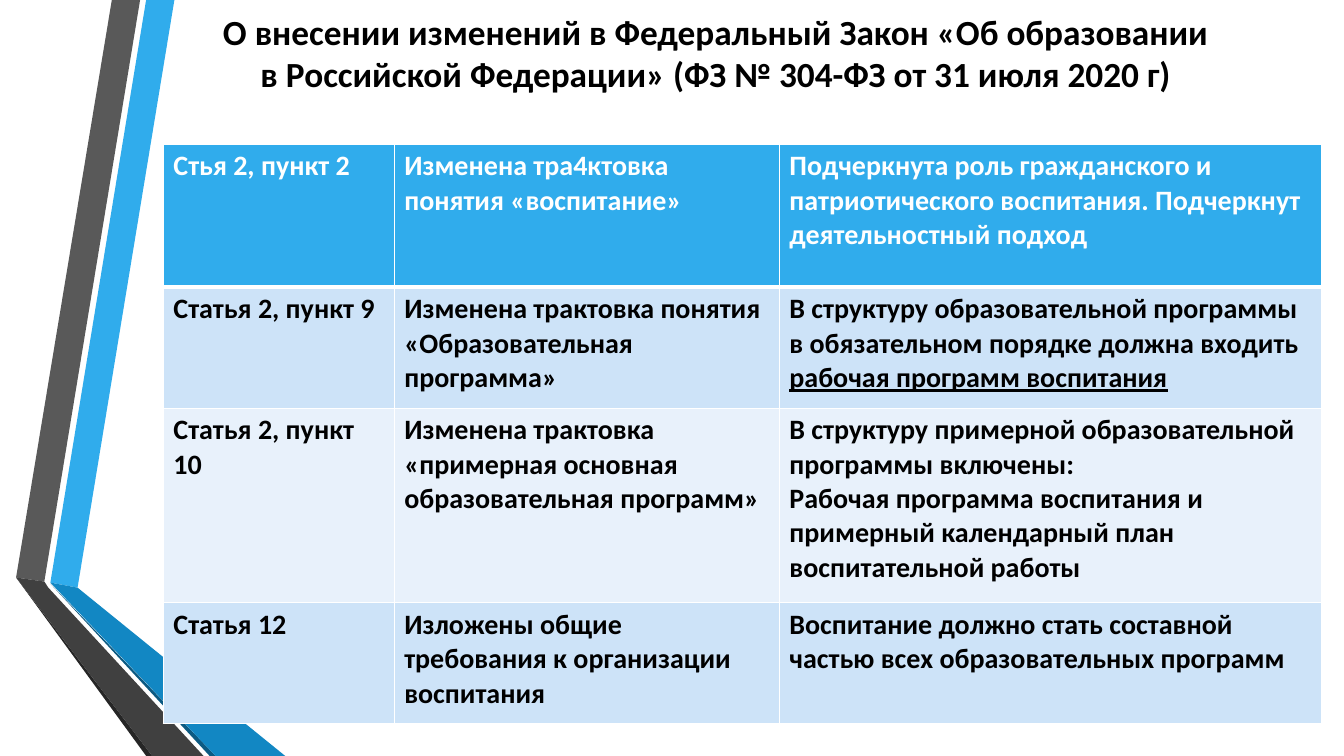
from dataclasses import dataclass

from lxml import etree
from pptx import Presentation
from pptx.dml.color import RGBColor
from pptx.enum.text import MSO_ANCHOR, MSO_AUTO_SIZE, PP_ALIGN
from pptx.oxml.ns import qn
from pptx.util import Pt

TOP = MSO_ANCHOR.TOP
CENTER = PP_ALIGN.CENTER
NO_FIT = MSO_AUTO_SIZE.NONE
PX = 9144
TITLE_ONLY = 5


@dataclass(frozen=True)
class Theme:
    font: str = "Calibri"
    title_size: float = 25.2
    cell_size: float = 20
    text: str = "000000"
    white: str = "FFFFFF"
    accent: str = "30ACEC"
    accent_dark: str = "1287C3"
    accent_edge: str = "0C5A82"
    grey: str = "595959"
    grey_dark: str = "404040"
    grey_edge: str = "262626"
    band: str = "CDE3F8"
    band_light: str = "E8F1FB"
    border: float = 1
    header_border: float = 3


TITLE = ("О внесении изменений в Федеральный Закон «Об образовании\v"
         "в Российской Федерации» (ФЗ № 304-ФЗ от 31 июля 2020 г)")
ROWS = [
    ["Стья 2, пункт 2",
     "Изменена тра4ктовка понятия «воспитание»",
     "Подчеркнута роль гражданского и патриотического воспитания. "
     "Подчеркнут деятельностный подход"],
    ["Статья 2, пункт 9",
     "Изменена трактовка понятия «Образовательная программа»",
     "В структуру образовательной программы в обязательном порядке "
     "должна входить "],
    ["Статья 2, пункт 10",
     "Изменена трактовка «примерная основная образовательная программ»",
     "В структуру примерной образовательной программы включены:\n"
     "Рабочая программа воспитания и примерный календарный план "
     "воспитательной работы"],
    ["Статья 12",
     "Изложены общие требования к организации воспитания",
     "Воспитание должно стать составной частью всех образовательных программ"],
]
UNDERLINED = {(1, 2): "рабочая программ воспитания"}
COL_WIDTHS = [229, 382, 538]
ROW_HEIGHTS = [142, 120, 193, 120]


class SlideBuilder:
    """Draws themed elements on one slide, with lengths in px."""

    def __init__(self, prs, theme):
        self.theme = theme
        self.slide = prs.slides.add_slide(prs.slide_layouts[TITLE_ONLY])

    def style_run(self, r, size, color):
        r.font.name = self.theme.font
        r.font.size = Pt(size)
        r.font.bold = True
        r.font.color.rgb = RGBColor.from_string(color)

    def title(self, text, x, y, w, h):
        sp = self.slide.shapes.title
        sp.left, sp.top, sp.width, sp.height = (v * PX for v in (x, y, w, h))
        tf = sp.text_frame
        tf.text = text
        tf.word_wrap = True
        tf.auto_size = NO_FIT
        tf.vertical_anchor = TOP
        tf.margin_top = 10 * PX
        p = tf.paragraphs[0]
        p.alignment = CENTER
        for r in p.runs:
            self.style_run(r, self.theme.title_size, self.theme.text)

    def polygon(self, points, color):
        builder = self.slide.shapes.build_freeform(*points[0], scale=PX)
        builder.add_line_segments(points[1:], close=True)
        sp = builder.convert_to_shape()
        sp.shadow.inherit = False
        sp.fill.solid()
        sp.fill.fore_color.rgb = RGBColor.from_string(color)
        sp.line.fill.background()

    def borders(self, cell, widths):
        tc_pr = cell._tc.get_or_add_tcPr()
        for side, width in widths.items():
            ln = etree.SubElement(tc_pr, qn(f"a:ln{side}"), w=str(Pt(width)))
            fill = etree.SubElement(ln, qn("a:solidFill"))
            etree.SubElement(fill, qn("a:srgbClr"), val=self.theme.white)

    def cell(self, cell, row, text, underlined):
        t = self.theme
        top = t.header_border if row == 1 else t.border
        bottom = t.header_border if row == 0 else t.border
        self.borders(cell, {"L": t.border, "R": t.border, "T": top, "B": bottom})
        cell.fill.solid()
        fill = t.accent if row == 0 else t.band if row % 2 else t.band_light
        cell.fill.fore_color.rgb = RGBColor.from_string(fill)
        tf = cell.text_frame
        tf.text = text
        if underlined:
            r = tf.paragraphs[-1].add_run()
            r.text = underlined
            r.font.underline = True
        for p in tf.paragraphs:
            for r in p.runs:
                self.style_run(r, t.cell_size, t.white if row == 0 else t.text)

    def table(self, rows, x, y, col_widths, row_heights, underlined):
        frame = self.slide.shapes.add_table(
            len(rows), len(col_widths), x * PX, y * PX,
            sum(col_widths) * PX, sum(row_heights) * PX)
        table = frame.table
        table.horz_banding = False
        for col, width in zip(table.columns, col_widths):
            col.width = width * PX
        for row, height in zip(table.rows, row_heights):
            row.height = height * PX
        for i, texts in enumerate(rows):
            for j, text in enumerate(texts):
                self.cell(table.cell(i, j), i, text, underlined.get((i, j)))


def main():
    prs = Presentation()
    prs.slide_width, prs.slide_height = 1333 * PX, 750 * PX
    theme = Theme()
    s = SlideBuilder(prs, theme)
    ribbons = [
        ([(50, 578), (77, 583), (173, 0), (145, 0)], theme.accent),
        ([(139, 0), (111, 0), (16, 573), (44, 577)], theme.grey),
        ([(16, 573), (145, 750), (151, 750)], theme.grey_edge),
        ([(50, 579), (208, 750), (214, 750)], theme.accent_edge),
        ([(50, 578), (214, 750), (283, 750), (77, 583)], theme.accent_dark),
        ([(202, 750), (48, 583), (44, 577), (16, 573), (151, 750)],
         theme.grey_dark),
    ]
    for points, color in ribbons:
        s.polygon(points, color)
    s.title(TITLE, 162, 0, 1096, 145)
    s.table(ROWS, 162, 143, COL_WIDTHS, ROW_HEIGHTS, UNDERLINED)
    prs.save("out.pptx")


if __name__ == "__main__":
    main()
